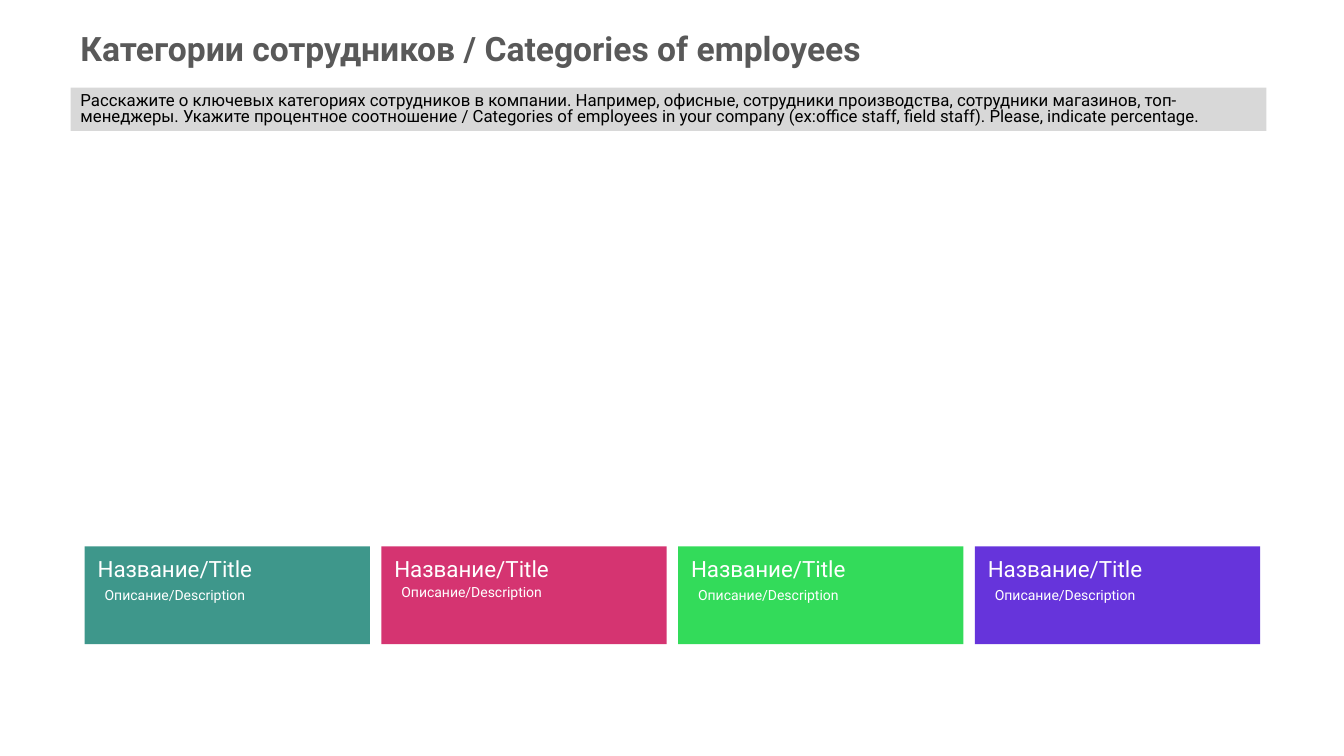
from lxml.etree import SubElement
from pptx import Presentation
from pptx.dml.color import RGBColor
from pptx.enum.shapes import MSO_SHAPE
from pptx.enum.text import MSO_ANCHOR, PP_ALIGN
from pptx.oxml.ns import qn
from pptx.util import Inches, Pt

FONT = "Roboto"
COLORS = {
    "heading": "595959",
    "band": "D8D8D8",
    "body": "000000",
    "card_text": "FFFFFF",
    "teal": "0E7D6F",
    "pink": "CB024E",
    "green": "01D331",
    "violet": "4002D3",
}
# Card colour and line spacing of its description
CARDS = [("teal", 1.2), ("pink", None), ("green", 1.2), ("violet", 1.2)]
CARD_WIDTH, CARD_HEIGHT, CARD_PITCH = 2.83, 0.97, 2.943


def write_text(shape, text, *, size, color, bold=False, spacing=None,
               anchor=MSO_ANCHOR.TOP):
    frame = shape.text_frame
    frame.word_wrap = True
    frame.vertical_anchor = anchor
    paragraph = frame.paragraphs[0]
    paragraph.alignment = PP_ALIGN.LEFT
    paragraph.line_spacing = spacing
    run = paragraph.add_run()
    run.text = text
    run.font.name = FONT
    run.font.size = Pt(size)
    run.font.bold = bold
    run.font.color.rgb = RGBColor.from_string(COLORS[color])


def add_label(slide, left, top, width, height, text, **text_format):
    label = slide.shapes.add_textbox(
        Inches(left), Inches(top), Inches(width), Inches(height))
    write_text(label, text, **text_format)


def add_panel(slide, left, top, width, height, color, opacity=100):
    panel = slide.shapes.add_shape(
        MSO_SHAPE.RECTANGLE,
        Inches(left), Inches(top), Inches(width), Inches(height))
    panel.shadow.inherit = False
    panel.line.fill.background()
    panel.fill.solid()
    panel.fill.fore_color.rgb = RGBColor.from_string(COLORS[color])
    if opacity < 100:
        srgb = panel.fill._xPr.find(".//" + qn("a:srgbClr"))
        SubElement(srgb, qn("a:alpha"), val=str(opacity * 1000))
    return panel


def add_header(slide, left, top, width):
    # Heading
    add_label(slide, left, top, 8.64, 0.49,
              "Категории сотрудников / Categories of employees",
              size=24, color="heading", bold=True, spacing=0.9,
              anchor=MSO_ANCHOR.MIDDLE)
    # Instruction band
    instruction = add_panel(slide, left, top + 0.61, width, 0.43, "band")
    write_text(instruction,
               "Расскажите о ключевых категориях сотрудников в компании. "
               "Например, офисные, сотрудники производства, сотрудники "
               "магазинов, топ-менеджеры. Укажите процентное "
               "соотношение / Categories of employees in your company "
               "(ex:office staff, field staff). Please, indicate percentage.",
               size=12, color="body", spacing=0.8, anchor=MSO_ANCHOR.MIDDLE)


def add_category_card(slide, left, top, color, spacing):
    add_panel(slide, left, top, CARD_WIDTH, CARD_HEIGHT, color, opacity=80)
    add_label(slide, left + 0.1, top + 0.32, 2.5, 0.29,
              "Описание/Description",
              size=10, color="card_text", spacing=spacing)
    add_label(slide, left + 0.03, top + 0.04, 2.8, 0.64, "Название/Title",
              size=16, color="card_text")


def add_category_row(slide, left, top):
    for index, (color, spacing) in enumerate(CARDS):
        add_category_card(slide, left + index * CARD_PITCH, top, color, spacing)


def main():
    presentation = Presentation()
    presentation.slide_width = Inches(13.33)
    presentation.slide_height = Inches(7.5)
    slide = presentation.slides.add_slide(presentation.slide_layouts[6])
    add_header(slide, 0.7, 0.26, 11.86)
    add_category_row(slide, 0.84, 5.42)
    presentation.save("out.pptx")


if __name__ == "__main__":
    main()
